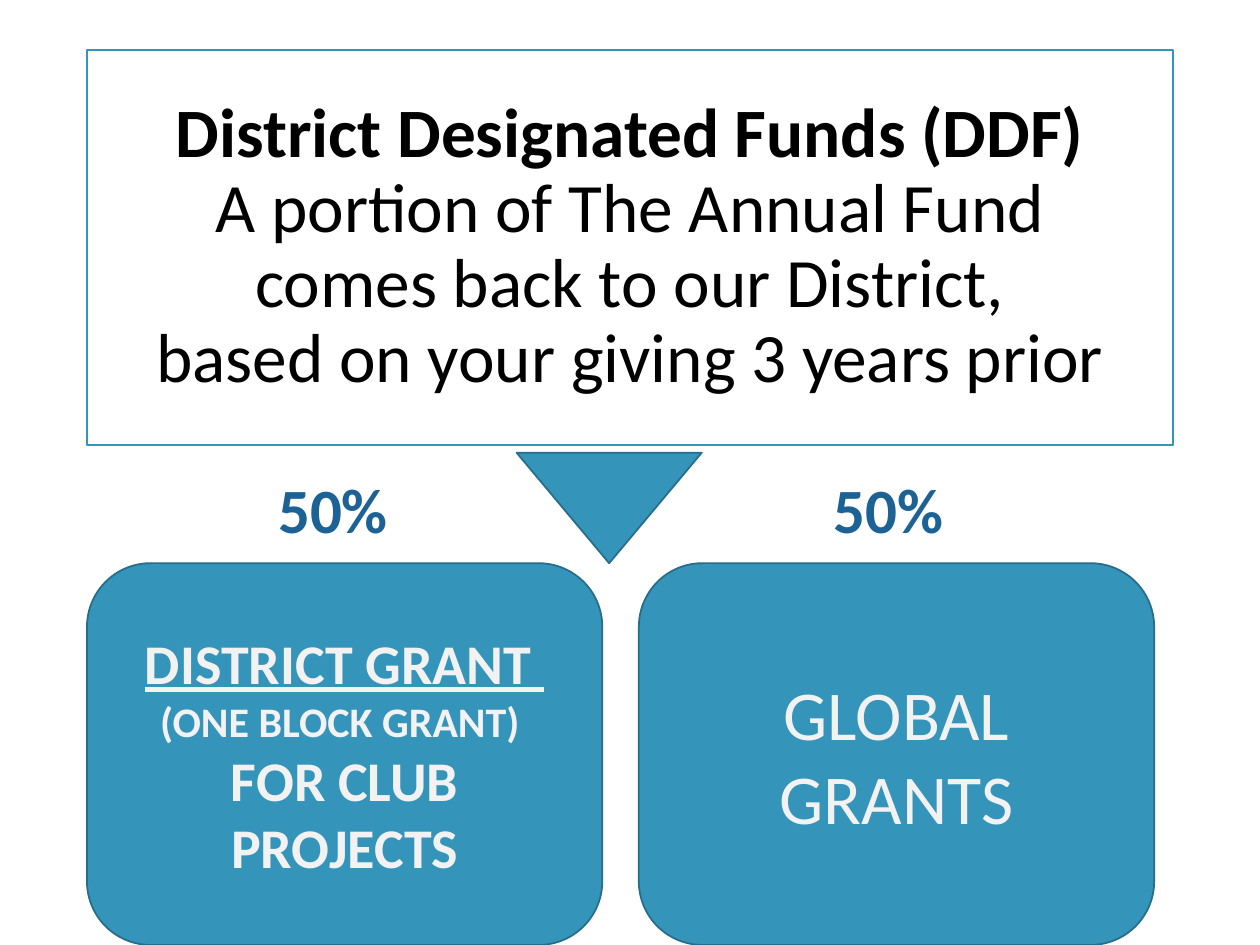
from pptx import Presentation
from pptx.dml.color import RGBColor
from pptx.enum.shapes import MSO_SHAPE
from pptx.enum.text import MSO_ANCHOR, MSO_AUTO_SIZE, PP_ALIGN
from pptx.util import Inches, Pt

WIDE, HIGH = Inches(10), Inches(7.5)
LEFT, STEP, CARD = 0.069, 0.438, 0.409
TEAL, EDGE, PALE, NAVY, INK = "3494BA", "266D8A", "F2F2F2", "1D6294", "000000"


def tint(code):
    """Turn a hex string into a colour."""
    return RGBColor.from_string(code)


def area(x, y, w, h):
    """Turn shares of the slide into lengths."""
    return [int(n) for n in (x * WIDE, y * HIGH, w * WIDE, h * HIGH)]


def style(run, color, **form):
    """Set the font values of a run."""
    run.font.color.rgb = tint(color)
    for key, val in {"name": "Calibri", **form}.items():
        setattr(run.font, key, val)


def write(frame, lines, color, align=PP_ALIGN.CENTER):
    """Fill a text frame with one paragraph per line."""
    frame.word_wrap = True
    for i, (text, form) in enumerate(lines):
        para = frame.add_paragraph() if i else frame.paragraphs[0]
        para.text, para.alignment = text, align
        for run in para.runs:
            style(run, color, **form)


def head(slide, text):
    """Format the title with a bold first line."""
    title = slide.shapes.title
    title.left, title.top, title.width, title.height = area(LEFT, 0.053, 0.862, 0.418)
    title.line.color.rgb, title.line.width = tint(TEAL), Pt(0.75)
    frame = title.text_frame
    frame.auto_size = MSO_AUTO_SIZE.NONE
    frame.vertical_anchor = MSO_ANCHOR.MIDDLE
    write(frame, [(text, {"size": Pt(39.6), "bold": False})], INK)
    para = frame.paragraphs[0]
    para.line_spacing = 0.9
    para.runs[0].font.bold = True


def block(slide, kind, place, lines=()):
    """Draw a teal shape with centred text."""
    shape = slide.shapes.add_shape(kind, *area(*place))
    shape.shadow.inherit = False
    shape.fill.solid()
    shape.fill.fore_color.rgb = tint(TEAL)
    shape.line.color.rgb, shape.line.width = tint(EDGE), Pt(1)
    shape.text_frame.vertical_anchor = MSO_ANCHOR.MIDDLE
    write(shape.text_frame, lines, PALE)


def label(slide, place, text):
    """Add a share label above a card."""
    frame = slide.shapes.add_textbox(*area(*place)).text_frame
    write(frame, [(text, {"size": Pt(36), "bold": True})], NAVY, PP_ALIGN.LEFT)


def main():
    """Build the slide and save it."""
    deck = Presentation()
    deck.slide_width, deck.slide_height = WIDE, HIGH
    slide = deck.slides.add_slide(deck.slide_layouts[5])
    head(slide, "District Designated Funds (DDF)\vA portion of The Annual Fund\v"
                "comes back to our District,\vbased on your giving 3 years prior")
    block(slide, MSO_SHAPE.FLOWCHART_MERGE, (0.41, 0.479, 0.147, 0.117))
    cards = [
        [("DISTRICT GRANT ", {"size": Pt(32), "bold": True, "underline": True}),
         ("(ONE BLOCK GRANT) ", {"size": Pt(24), "bold": True}),
         ("FOR CLUB PROJECTS", {"size": Pt(32), "bold": True})],
        [("GLOBAL GRANTS", {"size": Pt(40)})],
    ]
    for i, lines in enumerate(cards):
        place = (LEFT + i * STEP, 0.596, CARD, 0.404)
        block(slide, MSO_SHAPE.FLOWCHART_ALTERNATE_PROCESS, place, lines)
    for i in range(len(cards)):
        label(slide, (0.211 + i * 0.441, 0.491, 0.117, 0.094), "50%")
    deck.save("out.pptx")


if __name__ == "__main__":
    main()
